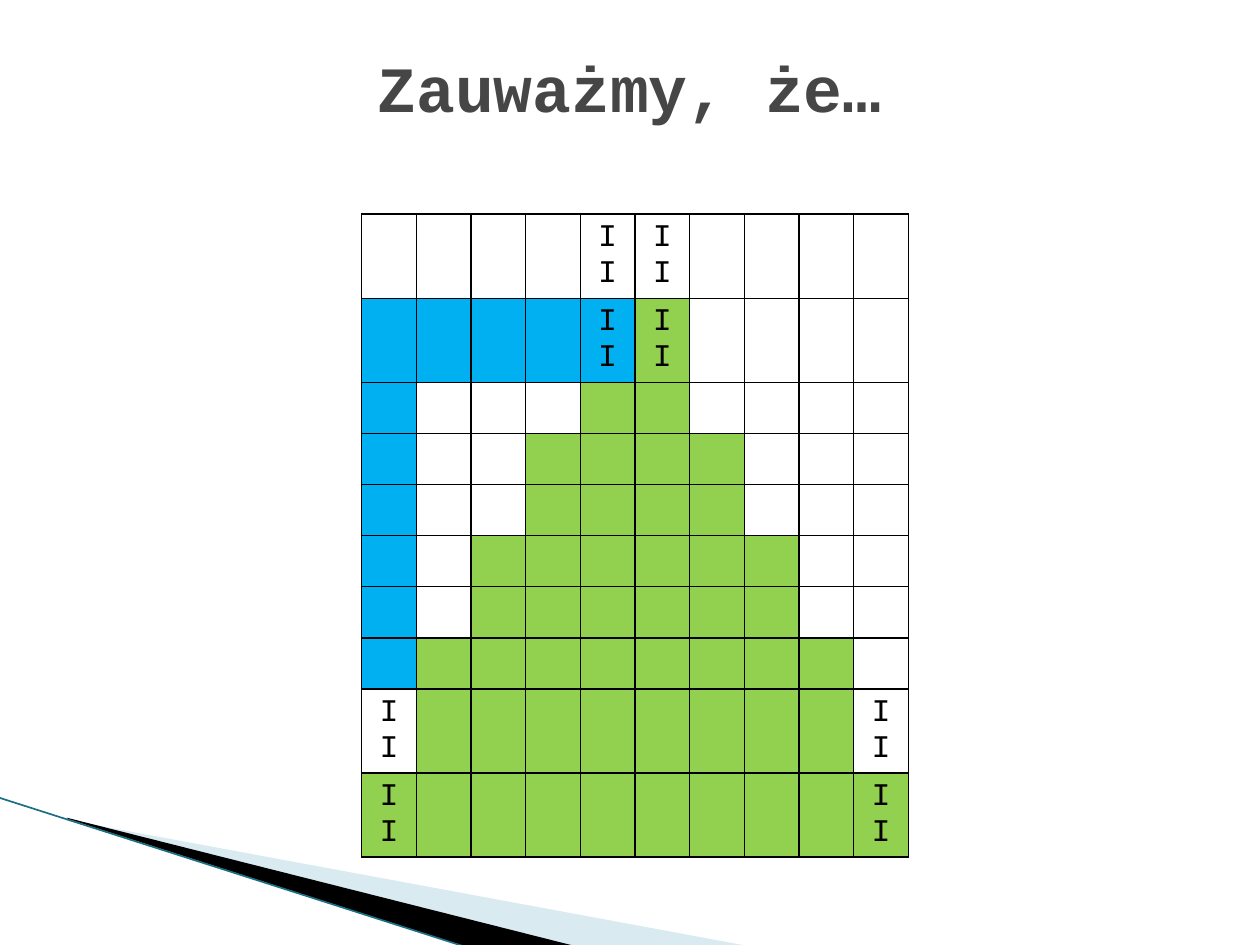
from typing import NamedTuple

from lxml.etree import SubElement
from pptx import Presentation
from pptx.dml.color import RGBColor
from pptx.enum.shapes import MSO_CONNECTOR
from pptx.enum.text import MSO_ANCHOR, PP_ALIGN
from pptx.oxml.ns import qn
from pptx.util import Inches, Pt

COLORS = {
    "title": "464646",
    "text": "000000",
    "border": "000000",
    "blue": "00B0F0",
    "green": "92D050",
    "pale": "A0CBDC",
    "black": "000000",
    "edge": "1B6F82",
}
FONT = "Courier New"

# One letter per cell: B blue, G green, dot unfilled
GRID = [
    "..........",
    "BBBBBG....",
    "B...GG....",
    "B..GGGG...",
    "B..GGGG...",
    "B.GGGGGG..",
    "B.GGGGGG..",
    "BGGGGGGGG.",
    ".GGGGGGGG.",
    "GGGGGGGGGG",
]
FILLS = {"B": "blue", "G": "green"}
MARKED = {(0, 4), (0, 5), (1, 4), (1, 5), (8, 0), (8, 9), (9, 0), (9, 9)}


class Wedge(NamedTuple):
    points: list[tuple[float, float]]
    color: str
    opacity: int


WEDGES = [
    Wedge([(0.55, 6.51), (5.95, 7.51), (4.56, 7.51), (0.55, 6.5)], "pale", 40),
    Wedge([(0.53, 6.49), (4.57, 7.51), (3.72, 7.52), (0.54, 6.5)], "black", 100),
]


def rgb(name: str) -> RGBColor:
    return RGBColor.from_string(COLORS[name])


def style_text(tf, size: float, color: str, bold: bool = False) -> None:
    p = tf.paragraphs[0]
    p.alignment = PP_ALIGN.CENTER
    font = p.runs[0].font
    font.name, font.size, font.bold = FONT, Pt(size), bold
    font.color.rgb = rgb(color)


def draw_wedge(slide, wedge: Wedge) -> None:
    start, *rest = [(Inches(x), Inches(y)) for x, y in wedge.points]
    builder = slide.shapes.build_freeform(*start)
    builder.add_line_segments(rest, close=True)
    sp = builder.convert_to_shape()
    sp.shadow.inherit = False
    sp.line.fill.background()
    sp.fill.solid()
    sp.fill.fore_color.rgb = rgb(wedge.color)
    if wedge.opacity < 100:
        clr = sp.fill._xPr.find(qn("a:solidFill"))[0]
        SubElement(clr, qn("a:alpha"), val=str(wedge.opacity * 1000))


def draw_edge(slide) -> None:
    line = slide.shapes.add_connector(
        MSO_CONNECTOR.STRAIGHT, Inches(-0.01), Inches(6.33), Inches(3.71), Inches(7.52)
    )
    line.line.color.rgb = rgb("edge")
    line.line.width = Pt(0.95)
    SubElement(line._element.spPr, qn("a:effectLst"))


def set_borders(cell) -> None:
    """Outline all four sides; must run before the cell gets its fill."""
    tc_pr = cell._tc.get_or_add_tcPr()
    for side in ("lnL", "lnR", "lnT", "lnB"):
        ln = SubElement(tc_pr, qn(f"a:{side}"), w=str(Pt(1)))
        fill = SubElement(ln, qn("a:solidFill"))
        SubElement(fill, qn("a:srgbClr"), val=COLORS["border"])


def draw_grid(slide) -> None:
    n_rows, n_cols = len(GRID), len(GRID[0])
    table = slide.shapes.add_table(
        n_rows, n_cols, Inches(2.87), Inches(1.7), Inches(4.34), Inches(4.05)
    ).table
    table.first_row = table.horz_banding = False
    for r, letters in enumerate(GRID):
        for c, letter in enumerate(letters):
            cell = table.cell(r, c)
            set_borders(cell)
            if letter in FILLS:
                cell.fill.solid()
                cell.fill.fore_color.rgb = rgb(FILLS[letter])
            else:
                cell.fill.background()
            if (r, c) in MARKED:
                cell.text_frame.text = "II"
                style_text(cell.text_frame, 18, "text")


def draw_title(slide) -> None:
    box = slide.shapes.add_textbox(Inches(0.5), Inches(0.3), Inches(9), Inches(0.77))
    tf = box.text_frame
    tf.word_wrap = True
    tf.vertical_anchor = MSO_ANCHOR.MIDDLE
    tf.text = "Zauważmy, że…"
    style_text(tf, 36.9, "title", bold=True)


def main() -> None:
    prs = Presentation()
    prs.slide_width, prs.slide_height = Inches(10), Inches(7.5)
    slide = prs.slides.add_slide(prs.slide_layouts[6])
    for wedge in WEDGES:
        draw_wedge(slide, wedge)
    draw_edge(slide)
    draw_grid(slide)
    draw_title(slide)
    prs.save("out.pptx")


if __name__ == "__main__":
    main()
